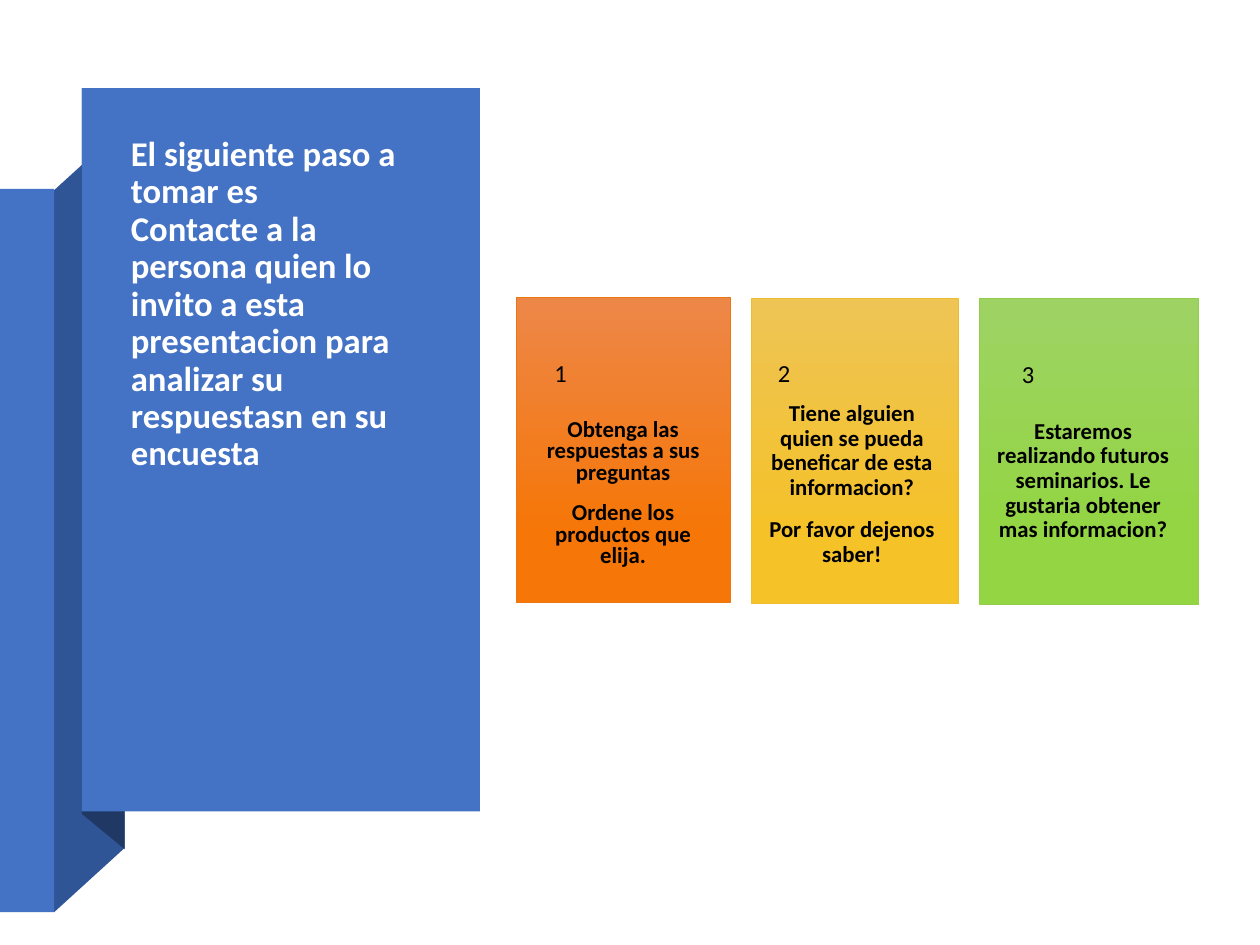
from dataclasses import dataclass
from typing import NamedTuple

from pptx import Presentation
from pptx.dml.color import RGBColor as RGB
from pptx.enum.shapes import MSO_SHAPE as Shape
from pptx.enum.text import MSO_ANCHOR as Anchor, PP_ALIGN as Align
from pptx.util import Inches, Pt

COLS, ROWS = 100, 75
UNIT = Inches(0.1)


@dataclass(frozen=True)
class Theme:
    font: str = "Calibri"
    front: str = "4472C4"
    side: str = "2F5597"
    back: str = "203864"
    light: str = "FFFFFF"
    dark: str = "000000"
    title: float = 19.8
    tag: float = 14
    body: float = 13


THEME = Theme()


class Box(NamedTuple):
    """Left, top, width and height in grid units."""
    x: float
    y: float
    w: float
    h: float

    def sub(self, x, y, w, h):
        """Box placed relative to this one's corner."""
        return Box(self.x + x, self.y + y, w, h)

    def emu(self):
        return [round(n * UNIT) for n in self]


class Card(NamedTuple):
    box: Box
    top: str
    base: str
    edge: str
    tag: tuple
    body: tuple
    lines: list
    pitch: float


CARDS = [
    Card(Box(41, 23.6, 17, 24.2), "ED8748", "F67607", "EB7712",
         (1.2, 3.4, 14.6, 5.4), (1.1, 9.7, 14.7, 13),
         ["Obtenga las respuestas a sus preguntas",
          "Ordene los productos que elija."], 0.8),
    Card(Box(59.65, 23.7, 16.4, 24.2), "EEC455", "F5C228", "ECBD31",
         (0.3, 3.3, 15.4, 5.4), (0.85, 8.2, 14.2, 15),
         ["Tiene alguien quien se pueda beneficar de esta informacion?",
          "Por favor dejenos saber!"], 0.9),
    Card(Box(77.75, 23.7, 17.35, 24.3), "9ED364", "93D543", "92CE4A",
         (1.55, 3.4, 13.3, 5.4), (0.65, 9.6, 15.1, 12.2),
         ["Estaremos realizando futuros seminarios. Le gustaria obtener "
          "mas informacion?"], 0.9),
]
TITLE = ("El siguiente paso a tomar es\vContacte a la persona quien lo invito "
         "a esta presentacion para analizar su respuestasn en su encuesta")


def paint(shape, color):
    shape.shadow.inherit = False
    shape.fill.solid()
    shape.fill.fore_color.rgb = RGB.from_string(color)
    shape.line.fill.background()


def panel(slide, box):
    return slide.shapes.add_shape(Shape.RECTANGLE, *box.emu())


def fold(slide, box, points, color):
    """Polygon whose points are offsets from the box corner."""
    spots = [((box.x + x) * UNIT, (box.y + y) * UNIT) for x, y in points]
    pen = slide.shapes.build_freeform(*spots[0])
    pen.add_line_segments(spots[1:], close=True)
    paint(pen.convert_to_shape(), color)


def write(slide, box, lines, size, color, bold=False, pitch=0.9,
          align=Align.LEFT, anchor=Anchor.TOP, pad=(0, 0), gap=0):
    """Text box; pad is the side and the top inset in grid units."""
    frame = slide.shapes.add_textbox(*box.emu()).text_frame
    frame.word_wrap = True
    frame.vertical_anchor = anchor
    side, top = (round(n * UNIT) for n in pad)
    frame.margin_left = frame.margin_right = side
    frame.margin_top = frame.margin_bottom = top
    for i, line in enumerate(lines):
        para = frame.add_paragraph() if i else frame.paragraphs[0]
        para.text = line
        para.alignment = align
        para.line_spacing = pitch
        if i:
            para.space_before = Pt(gap)
        for run in para.runs:
            font = run.font
            font.name, font.size, font.bold = THEME.font, Pt(size), bold
            font.color.rgb = RGB.from_string(color)


def ribbon(slide, box):
    """Folded band on the left with the title on its front."""
    fold(slide, box, [(4.3, 65.4), (9.9, 60.3), (9.9, 3), (4.3, 8.1)],
         THEME.side)
    paint(panel(slide, box.sub(0, 8, 4.3, 57.4)), THEME.front)
    fold(slide, box, [(6.5, 57.6), (9.9, 60.4), (9.9, 2.9), (6.5, 0)],
         THEME.back)
    paint(panel(slide, box.sub(6.5, 0, 31.6, 57.4)), THEME.front)
    write(slide, box.sub(9.4, 3.9, 26.1, 26.6), [TITLE], THEME.title,
          THEME.light, bold=True, anchor=Anchor.MIDDLE, pad=(1, 0.5))


def step(slide, num, card):
    """Numbered card with a vertical gradient."""
    shape = panel(slide, card.box)
    paint(shape, card.base)
    shape.fill.gradient()
    shape.fill.gradient_angle = 270
    stops = zip(shape.fill.gradient_stops, (0, 0.78), (card.top, card.base))
    for stop, spot, color in stops:
        stop.position = spot
        stop.color.rgb = RGB.from_string(color)
    shape.line.color.rgb = RGB.from_string(card.edge)
    shape.line.width = Pt(0.75)
    write(slide, card.box.sub(*card.body), card.lines, THEME.body, THEME.dark,
          bold=True, pitch=card.pitch, align=Align.CENTER, gap=10)
    write(slide, card.box.sub(*card.tag), [str(num)], THEME.tag, THEME.dark,
          anchor=Anchor.MIDDLE, pad=(1.8, 1.8))


def main():
    deck = Presentation()
    deck.slide_width, deck.slide_height = COLS * UNIT, ROWS * UNIT
    slide = deck.slides.add_slide(deck.slide_layouts[6])
    ribbon(slide, Box(0, 7, 38.1, 65.4))
    for num, card in enumerate(CARDS, 1):
        step(slide, num, card)
    deck.save("out.pptx")


if __name__ == "__main__":
    main()
